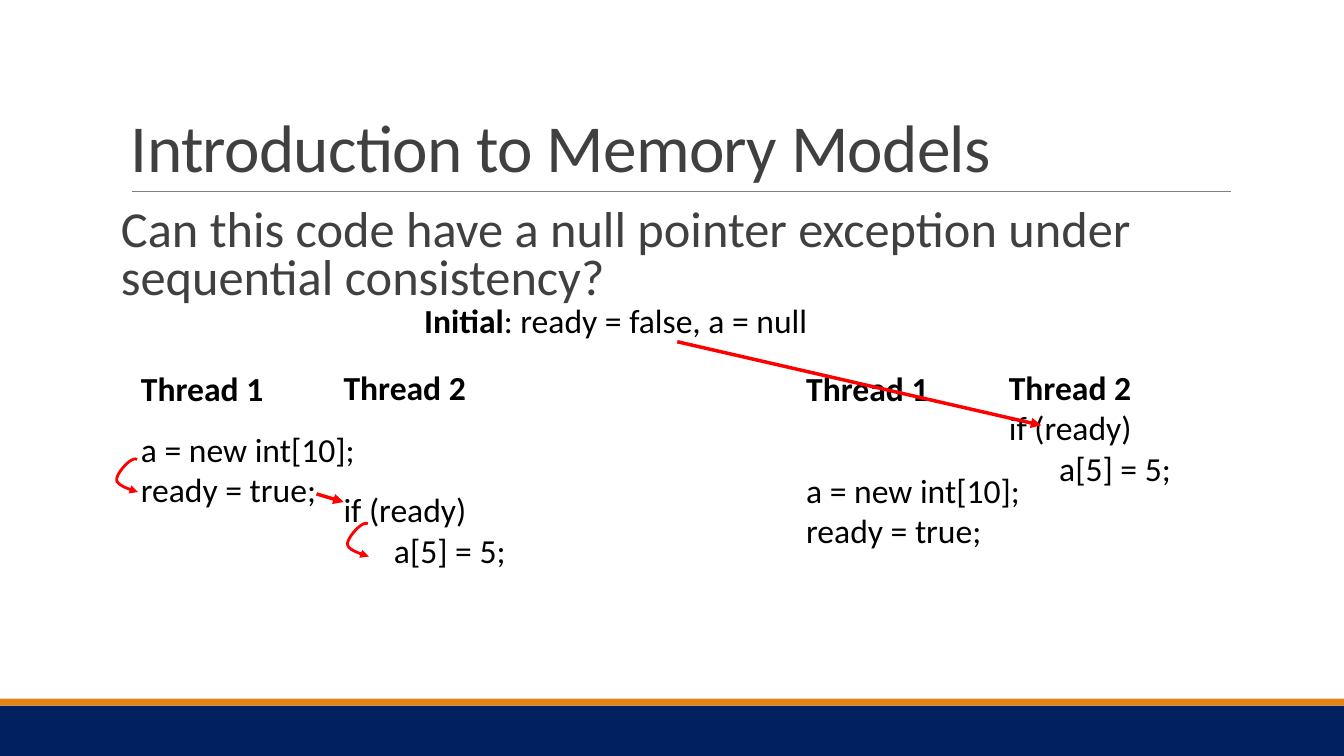
import pptx
import pptx.dml.color
import pptx.enum.shapes
import pptx.enum.text
import pptx.oxml.ns
import pptx.util
from dataclasses import dataclass
from lxml import etree

Pt = pptx.util.Pt


@dataclass(frozen=True)
class Theme:
    font: str = "Calibri"
    navy: str = "002060"
    orange: str = "E48312"
    rule: str = "808080"
    gray: str = "404040"
    black: str = "000000"
    red: str = "FF0000"
    title: float = 48
    lead: float = 36
    code: float = 24


def color(code):
    return pptx.dml.color.RGBColor.from_string(code)


def child(parent, tag, **attrs):
    return etree.SubElement(parent, pptx.oxml.ns.qn(tag), **attrs)


def write(para, text, *, font, size, ink, bold=False, track=None):
    """Add one run of text with its format."""
    run = para.add_run()
    run.text = text
    run.font.name = font
    run.font.size = Pt(size)
    run.font.bold = bold
    run.font.color.rgb = color(ink)
    if track is not None:
        run._r.get_or_add_rPr().set("spc", str(round(track * 100)))


def bezier(start, one, two, end, steps=12):
    """Points along a cubic curve, without its start."""
    for step in range(1, steps + 1):
        t = step / steps
        u = 1 - t
        yield tuple(u**3 * a + 3 * u * u * t * b + 3 * u * t * t * c + t**3 * d
                    for a, b, c, d in zip(start, one, two, end))


class Deck:
    def __init__(self, theme):
        self.theme = theme
        self.file = pptx.Presentation()
        self.file.slide_width = Pt(960)
        self.file.slide_height = Pt(540)
        self.slide = self.file.slides.add_slide(self.file.slide_layouts[6])
        self.shapes = self.slide.shapes

    def bar(self, left, top, width, height, fill):
        kind = pptx.enum.shapes.MSO_SHAPE.RECTANGLE
        shape = self.shapes.add_shape(kind, Pt(left), Pt(top), Pt(width), Pt(height))
        shape.shadow.inherit = False
        shape.fill.solid()
        shape.fill.fore_color.rgb = color(fill)
        shape.line.fill.background()

    def box(self, left, top, width, height, inset=7.2, low=False):
        frame = self.shapes.add_textbox(
            Pt(left), Pt(top), Pt(width), Pt(height)).text_frame
        frame.word_wrap = True
        frame.margin_left = frame.margin_right = Pt(inset)
        anchor = pptx.enum.text.MSO_ANCHOR
        frame.vertical_anchor = anchor.BOTTOM if low else anchor.TOP
        return frame

    def head(self, text, left, top, width, height, space, **look):
        para = self.box(left, top, width, height, look.pop("inset", 7.2),
                        look.pop("low", False)).paragraphs[0]
        para.line_spacing = space
        write(para, text, font=self.theme.font, ink=self.theme.gray, **look)

    def code(self, left, top, width, height, name, lines=(), gap=0, rest=""):
        """Bold name, then plain code lines given as (indent, text)."""
        look = dict(font=self.theme.font, size=self.theme.code, ink=self.theme.black)
        frame = self.box(left, top, width, height)
        write(frame.paragraphs[0], name, bold=True, **look)
        if rest:
            write(frame.paragraphs[0], rest, **look)
        for row, (indent, text) in enumerate(lines):
            para = frame.add_paragraph()
            if indent:
                para._p.get_or_add_pPr().set("marL", str(Pt(indent)))
            if row == 0 and gap:
                para.space_before = Pt(gap)
            write(para, text, **look)

    def stroke(self, shape, ink, width, arrow):
        shape.line.color.rgb = color(ink)
        shape.line.width = Pt(width)
        if arrow:
            child(shape.line._get_or_add_ln(), "a:tailEnd", type="triangle")

    def line(self, start, end, ink, width, arrow=True):
        kind = pptx.enum.shapes.MSO_CONNECTOR.STRAIGHT
        shape = self.shapes.add_connector(kind, *map(Pt, start + end))
        self.stroke(shape, ink, width, arrow)
        child(shape._element.spPr, "a:effectLst")

    def hook(self, left, top):
        """Curved arrow from one code line down to the next."""
        start, waist, tip = (14.5, 0), (0, 14.5), (15.2, 23.3)
        points = [*bezier(start, (11, -3), (-0.5, 10), waist),
                  *bezier(waist, (0, 18), (7.2, 20.8), tip)]
        spots = [(Pt(left + x), Pt(top + y)) for x, y in [start, *points]]
        maker = self.shapes.build_freeform(*spots[0])
        maker.add_line_segments(spots[1:], close=False)
        shape = maker.convert_to_shape()
        shape.shadow.inherit = False
        shape.fill.background()
        self.stroke(shape, self.theme.red, 2, True)


def main():
    theme = Theme()
    deck = Deck(theme)

    # Footer bars and title rule
    deck.bar(0, 504, 960, 36, theme.navy)
    deck.bar(0, 499, 960, 5, theme.orange)
    deck.line((94.3, 136.8), (879, 136.8), theme.rule, 0.5, arrow=False)

    # Title and question
    deck.head("Introduction to Memory Models", 86.4, 22.3, 792, 114.5, 0.85,
              size=theme.title, track=-0.5, low=True)
    deck.head("Can this code have a null pointer exception under "
              "sequential consistency?", 86.4, 145.4, 792, 79.2, 0.8,
              size=theme.lead, inset=0)

    # Initial state
    deck.code(295.9, 211, 345.6, 36, "Initial", rest=": ready = false, a = null")

    # Two runs of the same threads, each with its own delays
    maker = [(0, "a = new int[10];"), (0, "ready = true;")]
    user = [(0, "if (ready)"), (36, "a[5] = 5;")]
    for left, wait, hold in ((93.6, 14.6, 58.6), (568.8, 43.9, 0)):
        deck.code(left, 259.2, 170, 138, "Thread 1", maker, wait)
        deck.code(left + 144.7, 258.5, 144.7, 153, "Thread 2", user, hold)

    # Order arrows
    for left, top in ((83.4, 328.2), (248.3, 374.2)):
        deck.hook(left, top)
    deck.line((226.1, 352.8), (245.5, 358.6), theme.red, 2.5)
    deck.line((483.8, 244.1), (743.8, 303.8), theme.red, 2.5)

    deck.file.save("out.pptx")


if __name__ == "__main__":
    main()
